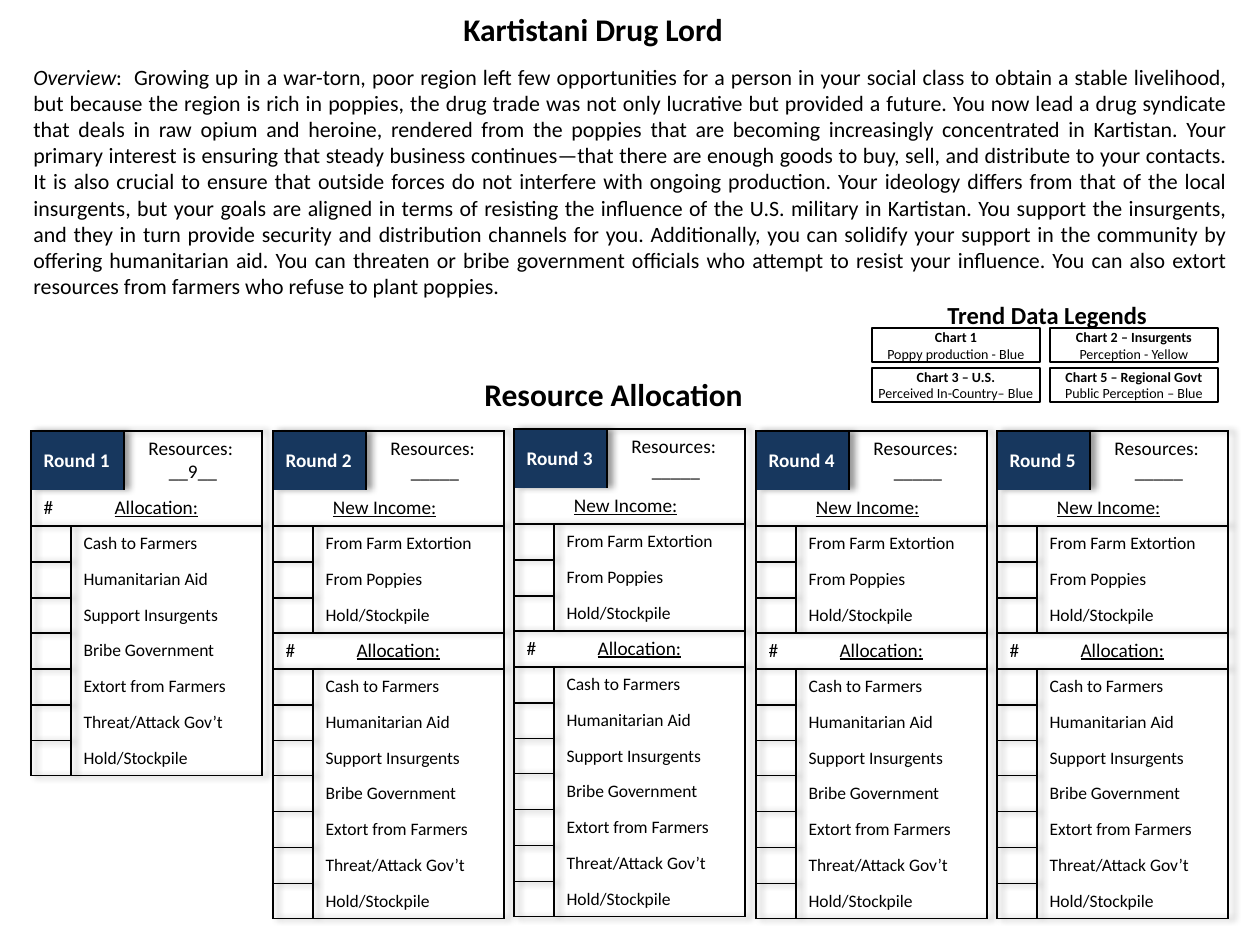
from dataclasses import dataclass

from lxml.etree import SubElement
from pptx import Presentation
from pptx.dml.color import RGBColor
from pptx.enum.shapes import MSO_SHAPE
from pptx.enum.text import MSO_ANCHOR, MSO_AUTO_SIZE, PP_ALIGN
from pptx.oxml import parse_xml
from pptx.oxml.ns import nsdecls, qn
from pptx.slide import Slide
from pptx.util import Emu, Pt

PX_PER_INCH = 126
NO_GRID_STYLE = "{2D5ABB26-0587-4C30-8999-92F81FD0307C}"

OVERVIEW = [
    ":  Growing up in a war-torn, poor region left few opportunities for a person in your "
    "social class to obtain a stable livelihood, but because the region is rich in poppies, "
    "the drug trade was not only lucrative but provided a future.",
    "You now lead a drug syndicate that deals in raw opium and heroine, rendered from the "
    "poppies that are becoming increasingly concentrated in Kartistan.",
    "Your primary interest is ensuring that steady business continues—that there are enough "
    "goods to buy, sell, and distribute to your contacts.",
    "It is also crucial to ensure that outside forces do not interfere with ongoing production.",
    "Your ideology differs from that of the local insurgents, but your goals are aligned in "
    "terms of resisting the influence of the U.S. military in Kartistan.",
    "You support the insurgents, and they in turn provide security and distribution channels "
    "for you.",
    "Additionally, you can solidify your support in the community by offering humanitarian aid.",
    "You can threaten or bribe government officials who attempt to resist your influence.",
    "You can also extort resources from farmers who refuse to plant poppies.",
]
INCOME = ["From Farm Extortion", "From Poppies", "Hold/Stockpile"]
ALLOCATION = ["Cash to Farmers", "Humanitarian Aid", "Support Insurgents", "Bribe Government",
              "Extort from Farmers", "Threat/Attack Gov’t", "Hold/Stockpile"]
LEGENDS = [
    ("Chart 1", "Poppy production - Blue"),
    ("Chart 2 – Insurgents", "Perception - Yellow"),
    ("Chart 3 – U.S.", "Perceived In-Country– Blue"),
    ("Chart 5 – Regional Govt", "Public Perception – Blue"),
]


def px(length):
    return Emu(round(length * 914400 / PX_PER_INCH))


def color(value):
    return RGBColor.from_string(value)


def write(paragraph, text, size=11, fill="000000", font="Calibri", bold=False,
          italic=False, underline=False, align=None):
    run = paragraph.add_run()
    run.text = text
    run.font.name = font
    run.font.size = Pt(size)
    run.font.bold = bold
    run.font.italic = italic
    run.font.underline = underline
    run.font.color.rgb = color(fill)
    if align is not None:
        paragraph.alignment = align


def add_borders(cell, sides, ink):
    properties = cell._tc.get_or_add_tcPr()
    for side in "LRTB":
        if side in sides:
            properties.append(parse_xml(
                f'<a:ln{side} {nsdecls("a")} w="12700"><a:solidFill>'
                f'<a:srgbClr val="{ink}"/></a:solidFill></a:ln{side}>'))


def add_tab_stop(paragraph, position):
    tabs = SubElement(paragraph._p.get_or_add_pPr(), qn("a:tabLst"))
    SubElement(tabs, qn("a:tab"), pos=str(px(position)), algn="l")


def style_table(table):
    """Drop the banded style and give the table a soft shadow to the right."""
    properties = table._tbl.tblPr
    properties.find(qn("a:tableStyleId")).text = NO_GRID_STYLE
    properties.insert(0, parse_xml(
        f'<a:effectLst {nsdecls("a")}><a:outerShdw blurRad="50800" dist="38100" algn="l" '
        'rotWithShape="0"><a:prstClr val="black"><a:alpha val="40000"/></a:prstClr>'
        '</a:outerShdw></a:effectLst>'))


@dataclass
class Sheet:
    slide: Slide
    ink: str = "000000"
    navy: str = "17375E"
    columns: tuple = (40, 53, 138)
    header_height: int = 59
    row_heights: tuple = (36, 36, 36, 35)

    def text_box(self, left, top, width, height, wrap=False):
        shape = self.slide.shapes.add_textbox(px(left), px(top), px(width), px(height))
        shape.text_frame.word_wrap = wrap
        shape.text_frame.auto_size = MSO_AUTO_SIZE.SHAPE_TO_FIT_TEXT
        return shape.text_frame.paragraphs[0]

    def heading(self, text, left, top, width, height, size=18):
        write(self.text_box(left, top, width, height), text, size=size, bold=True)

    def legend(self, title, detail, left, top):
        shape = self.slide.shapes.add_shape(
            MSO_SHAPE.RECTANGLE, px(left), px(top), px(168), px(34))
        shape.shadow.inherit = False
        shape.fill.background()
        shape.line.color.rgb = color(self.ink)
        shape.line.width = Pt(0.75)
        frame = shape.text_frame
        frame.word_wrap = True
        frame.margin_left = frame.margin_right = frame.margin_top = frame.margin_bottom = 0
        write(frame.paragraphs[0], title, size=8, bold=True, align=PP_ALIGN.CENTER)
        write(frame.add_paragraph(), detail, size=8, align=PP_ALIGN.CENTER)

    def cell(self, table, row, first, last, sides="", fill=None):
        """Merge columns first to last, style them and return the paragraph."""
        cell = table.cell(row, first)
        if last > first:
            cell.merge(table.cell(row, last))
        for column in range(first, last + 1):
            part = table.cell(row, column)
            add_borders(part, sides, self.ink)
            if fill:
                part.fill.solid()
                part.fill.fore_color.rgb = color(fill)
            else:
                part.fill.background()
        cell.vertical_anchor = MSO_ANCHOR.MIDDLE
        cell.margin_top = cell.margin_bottom = 0
        return cell.text_frame.paragraphs[0]

    def item_rows(self, table, start, items):
        for row, item in enumerate(items, start):
            blank = self.cell(table, row, 0, 0, "LRTB")
            SubElement(blank._p, qn("a:endParaRPr"), sz="1000")
            closing = "B" if row == start + len(items) - 1 else ""
            write(self.cell(table, row, 1, 2, "R" + closing), item, size=10)

    def round_table(self, number, left, top, resources, income):
        body_rows = len(ALLOCATION) + 1 + (len(income) + 1 if income else 0)
        heights = [self.header_height] + [
            self.row_heights[row % len(self.row_heights)] for row in range(body_rows)]
        table = self.slide.shapes.add_table(
            len(heights), len(self.columns), px(left), px(top),
            px(sum(self.columns)), px(sum(heights))).table
        style_table(table)
        for column, width in zip(table.columns, self.columns):
            column.width = px(width)
        for row, height in zip(table.rows, heights):
            row.height = px(height)

        # Round label and resources
        label = self.cell(table, 0, 0, 1, "LRT", self.navy)
        write(label, f"Round {number}", fill="FFFFFF", bold=True)
        total = self.cell(table, 0, 2, 2, "RT")
        write(total, "Resources: ", align=PP_ALIGN.CENTER)
        total.add_line_break()
        write(total, resources)

        # New income
        row = 1
        if income:
            title = self.cell(table, row, 0, 2, "LR")
            table.cell(row, 0).margin_left = px(60)
            write(title, "New Income:", underline=True)
            self.item_rows(table, row + 1, income)
            row += len(income) + 1

        # Allocation
        title = self.cell(table, row, 0, 2, "LRT" if income else "LR")
        add_tab_stop(title, 71)
        write(title, "#\t")
        write(title, "Allocation:", underline=True)
        self.item_rows(table, row + 1, ALLOCATION)


def main():
    presentation = Presentation()
    presentation.slide_width = px(1260)
    presentation.slide_height = px(945)
    sheet = Sheet(presentation.slides.add_slide(presentation.slide_layouts[6]))

    # Title and overview
    sheet.heading("Kartistani Drug Lord", 451, 4, 289, 51)
    overview = sheet.text_box(21, 57, 1218, 251, wrap=True)
    write(overview, "Overview", size=12.5, italic=True, align=PP_ALIGN.JUSTIFY)
    write(overview, " ".join(OVERVIEW), size=12.5)

    # Round tables
    sheet.heading("Resource Allocation", 472, 369, 286, 51)
    for index in range(5):
        sheet.round_table(
            index + 1, (63 + 483 * index) // 2, 429 if index == 2 else 431,
            "_____" if index else "__9__", INCOME if index else [])

    # Trend legends
    for index, (title, detail) in enumerate(LEGENDS):
        row, column = divmod(index, 2)
        sheet.legend(title, detail, 872 + 178 * column, 328 + 40 * row)
    sheet.heading("Trend Data Legends", 935, 294, 226, 43, size=14)

    presentation.save("out.pptx")


if __name__ == "__main__":
    main()
